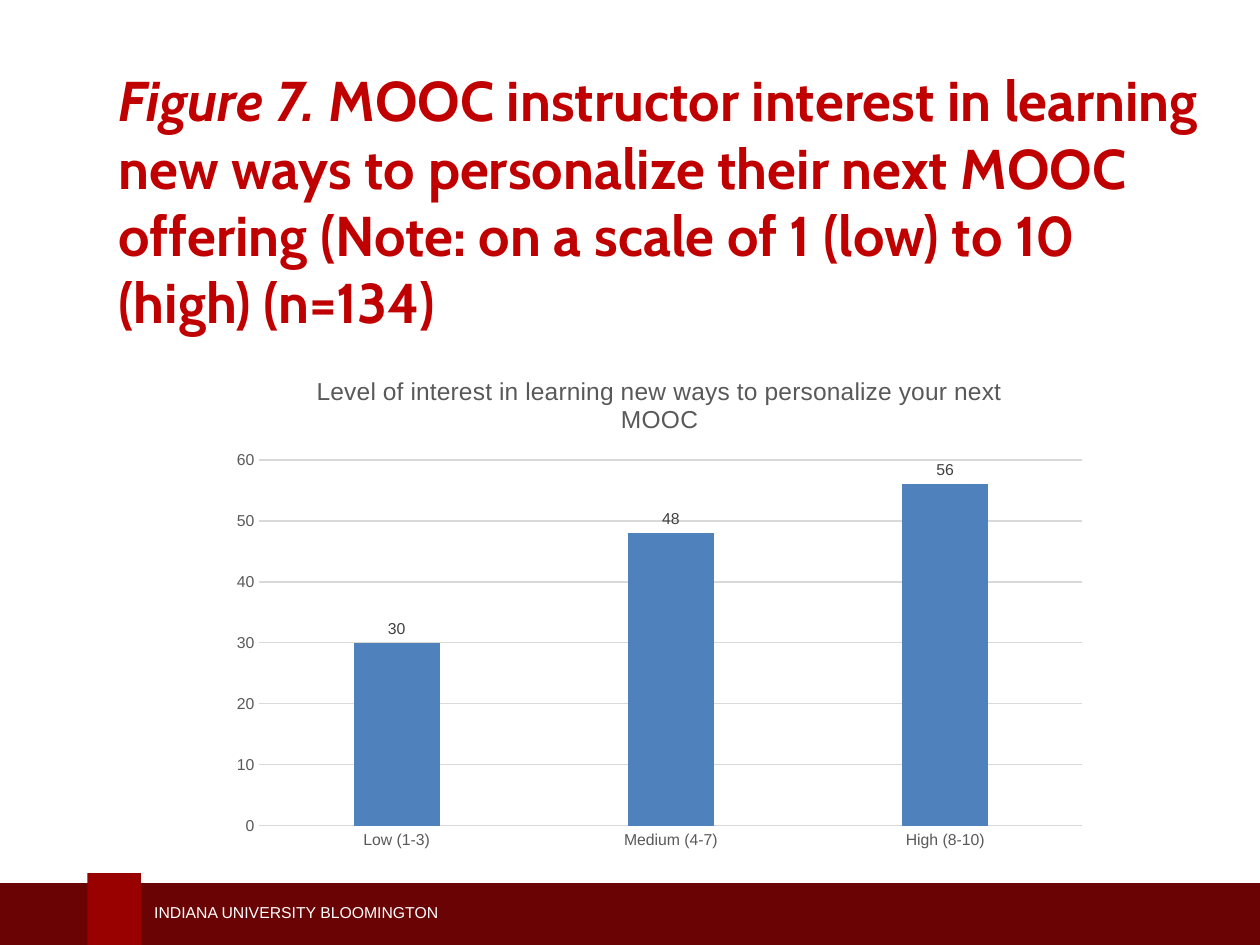
from pptx import Presentation
from pptx.chart.data import CategoryChartData
from pptx.dml.color import RGBColor
from pptx.enum.chart import XL_CHART_TYPE as ChartType, XL_LABEL_POSITION as LabelPos, XL_TICK_MARK as Tick
from pptx.enum.shapes import MSO_SHAPE as Shape
from pptx.enum.text import MSO_ANCHOR as Anchor
from pptx.util import Pt

COLORS = {
    "title": "C00000",
    "band": "690304",
    "tab": "990000",
    "white": "FFFFFF",
    "bar": "4F81BD",
    "grid": "D9D9D9",
    "axis": "595959",
    "label": "404040",
}


class SlideBuilder:
    def __init__(self, slide):
        self.slide = slide
        self.heading_font = "Cabin"
        self.body_font = "Arial"

    def color(self, name):
        return RGBColor.from_string(COLORS[name])

    def style(self, font, name, size, color, bold=False):
        font.name = name
        font.size = Pt(size)
        font.bold = bold
        font.color.rgb = self.color(color)

    def rect(self, box, color):
        s = self.slide.shapes.add_shape(Shape.RECTANGLE, *map(Pt, box))
        s.shadow.inherit = False
        s.fill.solid()
        s.fill.fore_color.rgb = self.color(color)
        s.line.fill.background()

    def text(self, box, runs, font, size, color, bold=False):
        tf = self.slide.shapes.add_textbox(*map(Pt, box)).text_frame
        tf.word_wrap = True
        tf.vertical_anchor = Anchor.MIDDLE
        p = tf.paragraphs[0]
        self.style(p.font, font, size, color, bold)
        for text, italic in runs:
            r = p.add_run()
            r.text = text
            if italic:
                r.font.italic = True

    def axis(self, axis):
        axis.major_tick_mark = axis.minor_tick_mark = Tick.NONE
        self.style(axis.tick_labels.font, self.body_font, 9, "axis")

    def grid_line(self, line):
        line.color.rgb = self.color("grid")
        line.width = Pt(0.75)

    def column_chart(self, box, title, categories, values):
        data = CategoryChartData()
        data.categories = categories
        data.add_series("Series 1", values)
        chart = self.slide.shapes.add_chart(
            ChartType.COLUMN_CLUSTERED, *map(Pt, box), data).chart
        chart.has_legend = False
        chart.font.name = self.body_font
        chart.font.size = Pt(10)

        chart.has_title = True
        p = chart.chart_title.text_frame.paragraphs[0]
        p.text = title
        self.style(p.font, self.body_font, 14, "axis")
        chart.chart_title.include_in_layout = False

        self.axis(chart.category_axis)
        self.grid_line(chart.category_axis.format.line)
        values_axis = chart.value_axis
        self.axis(values_axis)
        values_axis.format.line.fill.background()
        values_axis.minimum_scale, values_axis.maximum_scale = 0, 60
        values_axis.major_unit = 10
        self.grid_line(values_axis.major_gridlines.format.line)

        plot = chart.plots[0]
        plot.vary_by_categories = False
        plot.gap_width = 219
        plot.overlap = -27
        fill = plot.series[0].format.fill
        fill.solid()
        fill.fore_color.rgb = self.color("bar")
        plot.has_data_labels = True
        labels = plot.data_labels
        labels.show_value = True
        labels.position = LabelPos.OUTSIDE_END
        self.style(labels.font, self.body_font, 9, "label")


def main():
    prs = Presentation()
    prs.slide_width, prs.slide_height = Pt(720), Pt(540)
    b = SlideBuilder(prs.slides.add_slide(prs.slide_layouts[6]))

    b.rect((-2, 504.7, 726, 36), "band")
    b.rect((50, 499, 30.5, 42), "tab")
    b.text((81, 512, 284, 18), [("INDIANA UNIVERSITY BLOOMINGTON", False)],
           b.body_font, 9, "white")
    b.text((60.5, 43.2, 633, 142.5), [
        ("Figure 7.", True),
        (" MOOC instructor interest in learning new ways to personalize their next "
         "MOOC offering (Note: on a scale of 1 (low) to 10 (high) (n=134)", False),
    ], b.heading_font, 32, "title", bold=True)
    b.column_chart((125.3, 202.3, 503.3, 288.7),
                   "Level of interest in learning new ways to personalize your next MOOC",
                   ("Low (1-3)", "Medium (4-7)", "High (8-10)"), (30, 48, 56))

    prs.save("out.pptx")


if __name__ == "__main__":
    main()
